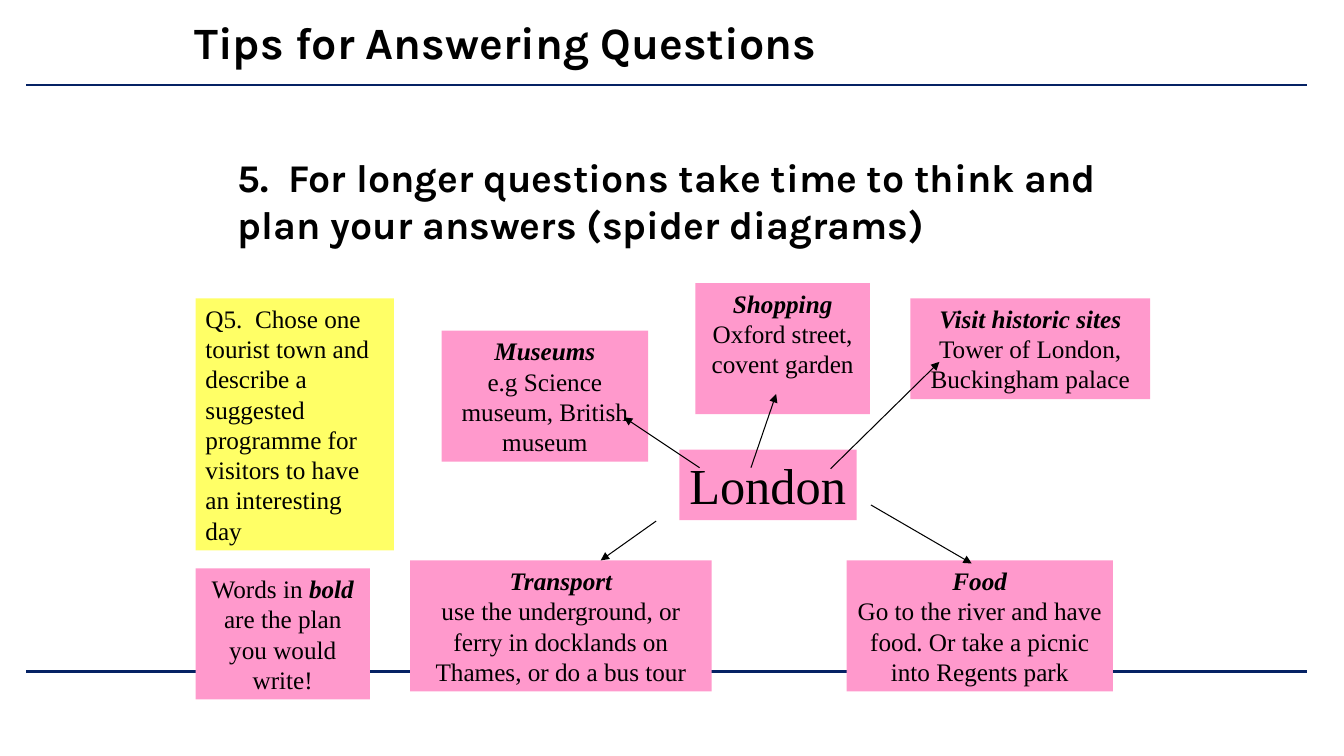
from dataclasses import dataclass

from lxml.etree import SubElement
from pptx import Presentation
from pptx.dml.color import RGBColor
from pptx.enum.shapes import MSO_CONNECTOR, MSO_SHAPE
from pptx.enum.text import MSO_ANCHOR, PP_ALIGN
from pptx.oxml.ns import qn
from pptx.shapes.autoshape import Shape
from pptx.slide import Slide
from pptx.util import Pt

COLORS = {
    "text": "000000",
    "rule": "052264",
    "question": "FFFF66",
    "idea": "FF99CC",
}
HEADING_FONT = "Karla"
BODY_FONT = "Times New Roman"


@dataclass(frozen=True)
class Run:
    text: str
    strong: bool = False


@dataclass(frozen=True)
class Heading:
    left: float
    top: float
    width: float
    height: float
    text: str
    size: float


@dataclass(frozen=True)
class Box:
    left: float
    top: float
    width: float
    height: float
    paragraphs: list[list[Run]]
    fill: str = "idea"
    size: float = 18
    align: PP_ALIGN = PP_ALIGN.CENTER
    wrap: bool = True


@dataclass(frozen=True)
class Line:
    start: tuple[float, float]
    end: tuple[float, float]
    color: str = "text"
    width: float = 0.75
    arrow: bool = True


def idea(title: str, detail: str) -> list[list[Run]]:
    """Return a bold italic plan word followed by its plain explanation."""
    return [[Run(title, strong=True)], [Run(detail)]]


RULES = [
    Line((18.7, y), (933.8, y), "rule", width, arrow=False)
    for y, width in ((60.5, 1.5), (479.5, 1.75))
]

HEADINGS = [
    Heading(131.8, 7.2, 489.6, 46.1, "Tips for Answering Questions", 32),
    Heading(162.7, 105.8, 640.8, 74.2,
            "5.  For longer questions take time to think and plan your answers "
            "(spider diagrams)", 28),
]

BOXES = [
    Box(139.7, 213.1, 141.8, 180,
        [[Run("Q5.  Chose one tourist town and describe a suggested programme "
              "for visitors to have an interesting day")]],
        fill="question", align=PP_ALIGN.LEFT),
    Box(485.3, 321.1, 126.7, 50.4, [[Run("London")]],
        size=36, align=PP_ALIGN.LEFT, wrap=False),
    Box(315.4, 236.2, 147.6, 93.6,
        idea("Museums", "e.g Science museum, British museum")),
    Box(496.8, 202.3, 124.6, 93.6,
        idea("Shopping", "Oxford street, covent garden")),
    Box(293, 400.3, 215.3, 93.6,
        idea("Transport", "use the underground, or ferry in docklands on Thames, "
                          "or do a bus tour")),
    Box(604.8, 400.3, 190.1, 93.6,
        idea("Food", "Go to the river and have food. Or take a picnic into "
                     "Regents park")),
    Box(650.2, 213.1, 171.4, 72,
        idea("Visit historic sites", "Tower of London, Buckingham palace")),
    Box(139.7, 406.1, 124.6, 93.6,
        [[Run("Words in "), Run("bold", strong=True),
          Run(" are the plan you would write!")]]),
]

ARROWS = [
    Line((499.7, 334.1), (445.7, 298.1)),
    Line((622.1, 360.7), (694.1, 402.5)),
    Line((536.4, 334.1), (554.4, 281.5)),
    Line((593.3, 334.8), (671, 258.5)),
    Line((468.7, 372.2), (429.1, 400.3)),
]


def color(name: str) -> RGBColor:
    return RGBColor.from_string(COLORS[name])


def draw_line(slide: Slide, line: Line) -> None:
    connector = slide.shapes.add_connector(
        MSO_CONNECTOR.STRAIGHT, *(Pt(value) for value in line.start + line.end))
    connector.line.color.rgb = color(line.color)
    connector.line.width = Pt(line.width)
    if line.arrow:
        SubElement(connector.line._get_or_add_ln(), qn("a:tailEnd"), type="triangle")
    SubElement(connector._element.spPr, qn("a:effectLst"))


def draw_heading(slide: Slide, heading: Heading) -> None:
    shape = slide.shapes.add_textbox(
        Pt(heading.left), Pt(heading.top), Pt(heading.width), Pt(heading.height))
    shape.text_frame.word_wrap = True
    shape.text_frame.text = heading.text
    font = shape.text_frame.paragraphs[0].runs[0].font
    font.name = HEADING_FONT
    font.size = Pt(heading.size)
    font.bold = True
    font.color.rgb = color("text")


def write_paragraphs(shape: Shape, box: Box) -> None:
    frame = shape.text_frame
    frame.word_wrap = box.wrap
    frame.vertical_anchor = MSO_ANCHOR.TOP
    for index, runs in enumerate(box.paragraphs):
        paragraph = frame.add_paragraph() if index else frame.paragraphs[0]
        paragraph.alignment = box.align
        for part in runs:
            run = paragraph.add_run()
            run.text = part.text
            run.font.name = BODY_FONT
            run.font.size = Pt(box.size)
            run.font.bold = run.font.italic = part.strong
            run.font.color.rgb = color("text")


def draw_box(slide: Slide, box: Box) -> None:
    shape = slide.shapes.add_shape(
        MSO_SHAPE.RECTANGLE,
        Pt(box.left), Pt(box.top), Pt(box.width), Pt(box.height))
    shape.shadow.inherit = False
    shape.fill.solid()
    shape.fill.fore_color.rgb = color(box.fill)
    shape.line.fill.background()
    write_paragraphs(shape, box)


def main() -> None:
    presentation = Presentation()
    presentation.slide_width = Pt(960)
    presentation.slide_height = Pt(540)
    slide = presentation.slides.add_slide(presentation.slide_layouts[6])
    for rule in RULES:
        draw_line(slide, rule)
    for heading in HEADINGS:
        draw_heading(slide, heading)
    for box in BOXES:
        draw_box(slide, box)
    for arrow in ARROWS:
        draw_line(slide, arrow)
    presentation.save("out.pptx")


if __name__ == "__main__":
    main()
